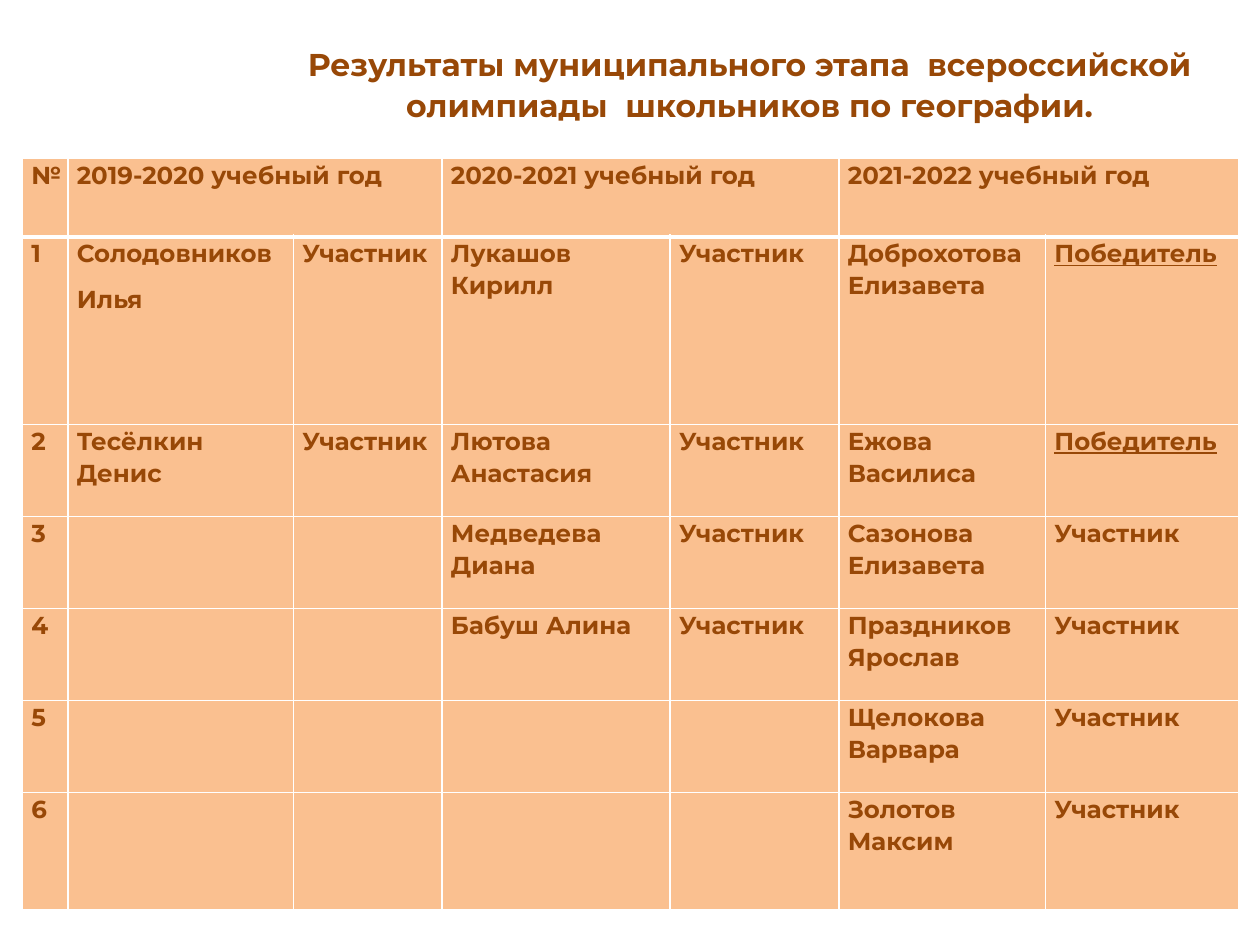
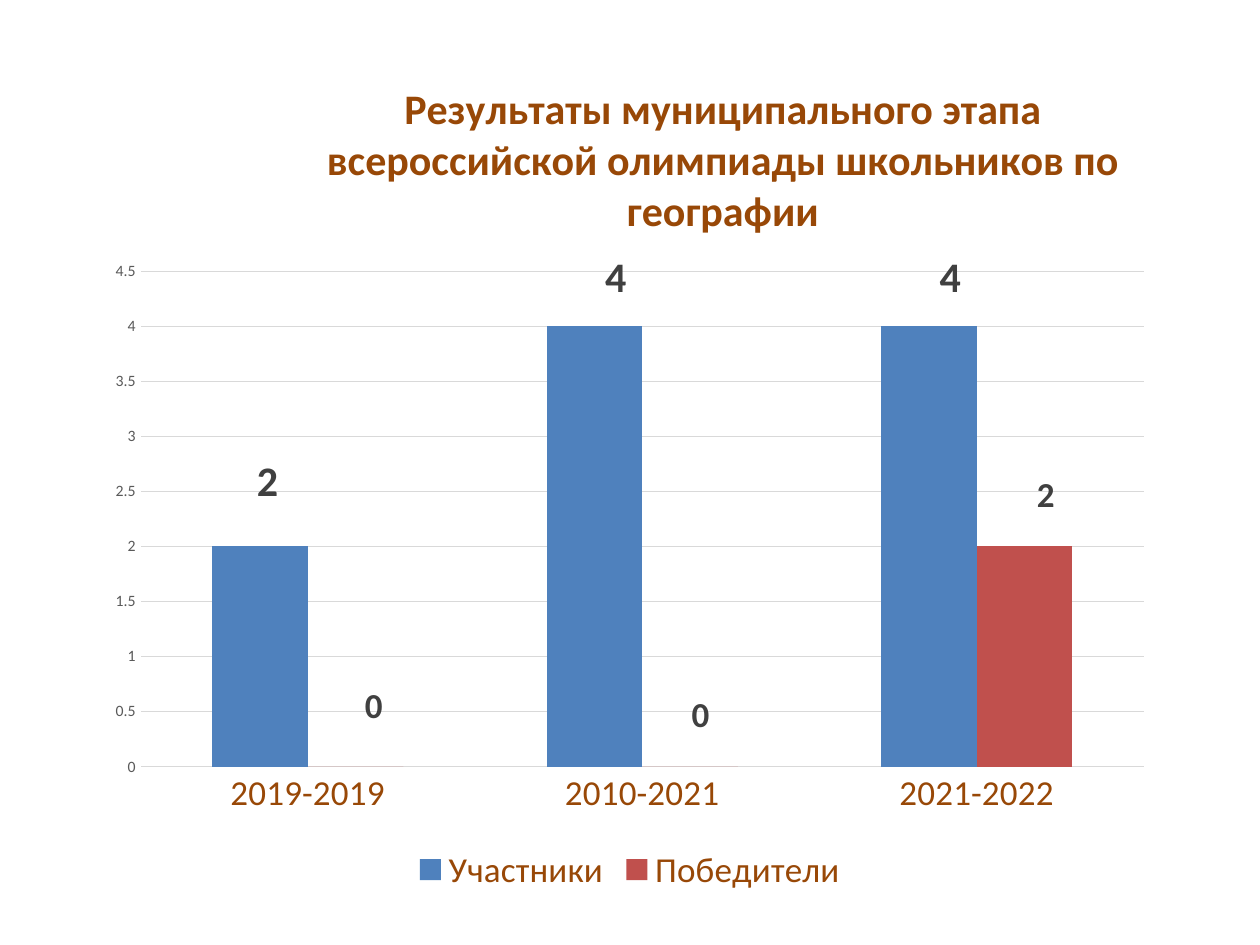
import pptx
import pptx.chart.data
import pptx.dml.color
import pptx.enum.chart
import pptx.enum.text
import pptx.oxml
import pptx.oxml.ns
import pptx.util

Pt = pptx.util.Pt
BROWN, PEACH, WHITE = "984807", "FAC090", "FFFFFF"
GREY, LABEL_GREY, GRID_GREY = "595959", "404040", "D9D9D9"
TABLE_FONT, CHART_FONT = "Montserrat", "Calibri"
LINE_SPACING, SPACE_AFTER = 1.07, Pt(8)

COLUMN_WIDTHS = [25.92, 128.88, 84.96, 130.32, 96.48, 118.08, 110.16]
ROW_HEIGHTS = [44.64, 107.28] + [52.56] * 4 + [66.96]
YEARS = ["2019-2020", "2020-2021", "2021-2022"]
MEMBER, WINNER = "Участник", "Победитель"
PUPILS = [
    [(["Солодовников", "Илья"], MEMBER), (["Тесёлкин Денис"], MEMBER)],
    [(["Лукашов Кирилл"], MEMBER), (["Лютова Анастасия"], MEMBER),
     (["Медведева Диана"], MEMBER), (["Бабуш Алина"], MEMBER)],
    [(["Доброхотова Елизавета"], WINNER), (["Ежова Василиса"], WINNER),
     (["Сазонова Елизавета"], MEMBER), (["Праздников Ярослав"], MEMBER),
     (["Щелокова Варвара"], MEMBER), (["Золотов Максим"], MEMBER)],
]
SERIES = [
    ("Участники", [2, 4, 4], "4F81BD", 24,
     [(0.007, -0.04), (0.02, -0.02), (0.02, -0.02)]),
    ("Победители", [0, 0, 2], "C0504D", 20,
     [(0.017, -0.04), (0.01, -0.03), (0.02, -0.03)]),
]


def rgb(hex_color):
    """Return the colour for a hex string."""
    return pptx.dml.color.RGBColor.from_string(hex_color)


def style_font(font, name, size, color, bold=False):
    """Set the typeface, size, colour and weight of a font."""
    font.name, font.size, font.bold = name, Pt(size), bold
    font.color.rgb = rgb(color)


def write(frame, lines, size, underline=False, align=None):
    """Fill a text frame with one bold brown paragraph per line."""
    for number, line in enumerate(lines):
        paragraph = frame.add_paragraph() if number else frame.paragraphs[0]
        paragraph.alignment = align
        paragraph.line_spacing = LINE_SPACING
        paragraph.space_after = SPACE_AFTER
        run = paragraph.add_run()
        run.text = line
        style_font(run.font, TABLE_FONT, size, BROWN, True)
        run.font.underline = underline


def add_heading(slide, text):
    """Add the centred heading above the table."""
    box = slide.shapes.add_textbox(Pt(156.24), Pt(20.88), Pt(544.32), Pt(52.56))
    box.text_frame.word_wrap = True
    box.text_frame.auto_size = pptx.enum.text.MSO_AUTO_SIZE.SHAPE_TO_FIT_TEXT
    write(box.text_frame, [text], 18, align=pptx.enum.text.PP_ALIGN.CENTER)


def style_cell(cell, bottom_width):
    """Give a cell its margins, white borders and peach fill."""
    cell.margin_left = cell.margin_right = Pt(5.04)
    cell.margin_top = cell.margin_bottom = 0
    properties = cell._tc.get_or_add_tcPr()
    for side, width in zip("LRTB", (1, 1, 1, bottom_width)):
        properties.append(pptx.oxml.parse_xml(
            f'<a:ln{side} {pptx.oxml.ns.nsdecls("a")} w="{Pt(width)}"><a:solidFill>'
            f'<a:srgbClr val="{WHITE}"/></a:solidFill></a:ln{side}>'))
    cell.fill.solid()
    cell.fill.fore_color.rgb = rgb(PEACH)


def add_results_table(slide):
    """Add the table of pupils and their results by school year."""
    table = slide.shapes.add_table(
        len(ROW_HEIGHTS), len(COLUMN_WIDTHS), Pt(12.96), Pt(90.72),
        Pt(sum(COLUMN_WIDTHS)), Pt(sum(ROW_HEIGHTS))).table
    table.horz_banding = False
    for column, width in zip(table.columns, COLUMN_WIDTHS):
        column.width = Pt(width)
    for number, (row, height) in enumerate(zip(table.rows, ROW_HEIGHTS)):
        row.height = Pt(height)
        for cell in row.cells:
            style_cell(cell, 1 if number else 3)
        write(row.cells[0].text_frame, [str(number) if number else "№"], 14)
    for block, (year, pupils) in enumerate(zip(YEARS, PUPILS)):
        left = 1 + 2 * block
        table.cell(0, left).merge(table.cell(0, left + 1))
        write(table.cell(0, left).text_frame, [f"{year} учебный год"], 14)
        for number, (name, result) in enumerate(pupils, 1):
            write(table.cell(number, left).text_frame, name, 14)
            write(table.cell(number, left + 1).text_frame, [result], 14,
                  underline=result == WINNER)


def place(element, index, **values):
    """Put a manual layout at the given child index of a chart element."""
    for old in element.xpath("./c:layout"):
        element.remove(old)
    settings = "".join(f'<c:{key} val="{value}"/>' for key, value in values.items())
    element.insert(index, pptx.oxml.parse_xml(
        f'<c:layout {pptx.oxml.ns.nsdecls("c")}><c:manualLayout>{settings}'
        '</c:manualLayout></c:layout>'))


def style_axis(axis, size, color):
    """Give an axis its label font and hide its line and ticks."""
    axis.major_tick_mark = axis.minor_tick_mark = pptx.enum.chart.XL_TICK_MARK.NONE
    axis.format.line.fill.background()
    style_font(axis.tick_labels.font, CHART_FONT, size, color)


def style_series(series, color, size, offsets):
    """Colour a series and shift its value labels."""
    series.format.fill.solid()
    series.format.fill.fore_color.rgb = rgb(color)
    for number, (x, y) in enumerate(offsets):
        label = series.points[number].data_label
        style_font(label.font, CHART_FONT, size, LABEL_GREY, True)
        label.position = pptx.enum.chart.XL_LABEL_POSITION.OUTSIDE_END
    for label, (x, y) in zip(series._element.xpath(".//c:dLbl"), offsets):
        place(label, 1, x=x, y=y)
    for leader in series._element.xpath(".//c:showLeaderLines"):
        leader.set("val", "0")


def add_results_chart(slide, title):
    """Add the column chart of participants and winners."""
    data = pptx.chart.data.CategoryChartData()
    data.categories = ["2019-2019", "2010-2021", "2021-2022"]
    for name, values, *_ in SERIES:
        data.add_series(name, values)
    chart = slide.shapes.add_chart(
        pptx.enum.chart.XL_CHART_TYPE.COLUMN_CLUSTERED,
        Pt(54), Pt(31.68), Pt(612), Pt(481.68), data).chart
    style_font(chart.font, CHART_FONT, 10, "000000")

    run = chart.chart_title.text_frame.paragraphs[0].add_run()
    run.text = title
    style_font(run.font, CHART_FONT, 24, BROWN, True)
    place(chart.chart_title._element, 1, xMode="edge", yMode="edge", x=0.21, y=0.02)
    place(chart._chartSpace.chart.plotArea, 0, layoutTarget="inner",
          xMode="edge", yMode="edge", x=0.043, y=0.256, w=0.937, h=0.588)

    style_axis(chart.category_axis, 20, BROWN)
    scale = chart.value_axis
    style_axis(scale, 9, GREY)
    scale.minimum_scale, scale.maximum_scale, scale.major_unit = 0, 4.5, 0.5
    grid = scale.major_gridlines.format.line
    grid.width = Pt(0.75)
    grid.color.rgb = rgb(GRID_GREY)

    chart.has_legend = True
    chart.legend.position = pptx.enum.chart.XL_LEGEND_POSITION.BOTTOM
    chart.legend.include_in_layout = False
    style_font(chart.legend.font, CHART_FONT, 20, BROWN)

    plot = chart.plots[0]
    plot.gap_width, plot.overlap, plot.vary_by_categories = 150, 0, False
    for series, (_, _, color, size, offsets) in zip(plot.series, SERIES):
        style_series(series, color, size, offsets)


def main():
    """Build both slides and save the presentation."""
    deck = pptx.Presentation()
    deck.slide_width, deck.slide_height = Pt(720), Pt(540)
    blank = deck.slide_layouts[6]
    table_slide = deck.slides.add_slide(blank)
    add_heading(table_slide, "Результаты муниципального этапа  всероссийской "
                             "олимпиады  школьников по географии.")
    add_results_table(table_slide)
    add_results_chart(deck.slides.add_slide(blank),
                      "Результаты муниципального этапа всероссийской "
                      "олимпиады школьников по географии")
    deck.save("out.pptx")


if __name__ == "__main__":
    main()
